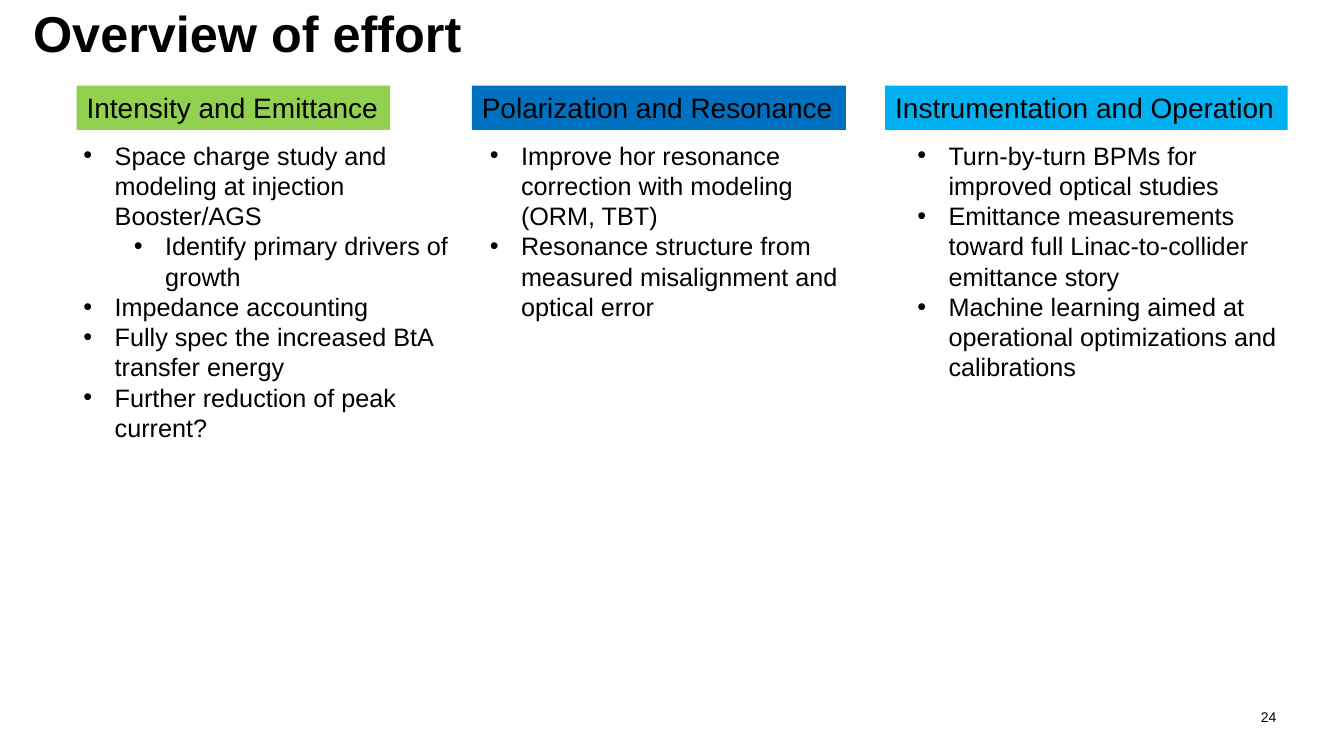
import pptx
import pptx.dml.color
import pptx.enum.shapes
import pptx.enum.text
import pptx.oxml
import pptx.oxml.ns
import pptx.util
from dataclasses import dataclass

Inches = pptx.util.Inches
Pt = pptx.util.Pt
Align = pptx.enum.text.PP_ALIGN
Anchor = pptx.enum.text.MSO_ANCHOR
Fit = pptx.enum.text.MSO_AUTO_SIZE


@dataclass(frozen=True)
class Theme:
    face: str = "Arial"
    ink: str = "000000"
    green: str = "92D050"
    blue: str = "0070C0"
    sky: str = "00B0F0"
    title: int = 36
    head: int = 20
    body: int = 18
    page: int = 10


THEME = Theme()

COLUMNS = [
    ("Intensity and Emittance", THEME.green, (0.76, 3.11), (0.23, 4.63, 3.13), [
        (1, "Space charge study and modeling at injection Booster/AGS"),
        (2, "Identify primary drivers of growth"),
        (1, "Impedance accounting"),
        (1, "Fully spec the increased BtA transfer energy"),
        (1, "Further reduction of peak current?"),
    ]),
    ("Polarization and Resonance", THEME.blue, (4.68, 3.71), (4.26, 4.27, 1.92), [
        (1, "Improve hor resonance correction with modeling (ORM, TBT)"),
        (1, "Resonance structure from measured misalignment and optical error"),
    ]),
    ("Instrumentation and Operation", THEME.sky, (8.78, 3.99), (8.5, 4.27, 2.52), [
        (1, "Turn-by-turn BPMs for improved optical studies"),
        (1, "Emittance measurements toward full Linac-to-collider emittance story"),
        (1, "Machine learning aimed at operational optimizations and calibrations"),
    ]),
]


def apply(target, values):
    for name, value in values.items():
        setattr(target, name, value)


def color(code):
    return pptx.dml.color.RGBColor.from_string(code)


def write(para, text, size, bold=False, **form):
    para.text = text
    apply(para, form)
    apply(para.font, {"name": THEME.face, "size": Pt(size), "bold": bold})
    para.font.color.rgb = color(THEME.ink)


def add_box(slide, area, **form):
    box = slide.shapes.add_textbox(*map(Inches, area))
    apply(box.text_frame, {"word_wrap": True, **form})
    return box.text_frame


def add_head(slide, text, fill, left, width):
    kind = pptx.enum.shapes.MSO_SHAPE.RECTANGLE
    head = slide.shapes.add_shape(kind, *map(Inches, (left, 0.85, width, 0.44)))
    head.shadow.inherit = False
    head.fill.solid()
    head.fill.fore_color.rgb = color(fill)
    head.line.fill.background()
    apply(head.text_frame, {
        "word_wrap": False,
        "auto_size": Fit.SHAPE_TO_FIT_TEXT,
        "vertical_anchor": Anchor.TOP,
    })
    write(head.text_frame.paragraphs[0], text, THEME.head, alignment=Align.LEFT)


def add_bullet(para, level):
    props = para._p.get_or_add_pPr()
    props.set("marL", str(Inches(0.31 + 0.5 * level)))
    props.set("indent", str(Inches(-0.31)))
    space = pptx.oxml.ns.nsdecls("a")
    for tag in ('buFont {} typeface="Arial"', 'buChar {} char="•"'):
        props.append(pptx.oxml.parse_xml(f"<a:{tag.format(space)}/>"))


def add_list(slide, items, left, width, height):
    frame = add_box(slide, (left, 1.34, width, height), auto_size=Fit.SHAPE_TO_FIT_TEXT)
    for row, (level, text) in enumerate(items):
        para = frame.add_paragraph() if row else frame.paragraphs[0]
        add_bullet(para, level)
        write(para, text, THEME.body, level=level)


def add_title(slide, text):
    frame = add_box(slide, (0.23, 0, 12.33, 0.71), vertical_anchor=Anchor.MIDDLE)
    write(frame.paragraphs[0], text, THEME.title, bold=True, line_spacing=0.9)


def add_page(slide, text):
    frame = add_box(
        slide, (12.24, 6.91, 0.47, 0.4), vertical_anchor=Anchor.MIDDLE,
        margin_left=0, margin_top=0, margin_right=Inches(0.05), margin_bottom=0,
    )
    write(frame.paragraphs[0], text, THEME.page, alignment=Align.RIGHT)


def main():
    deck = pptx.Presentation()
    apply(deck, {"slide_width": Inches(13.33), "slide_height": Inches(7.5)})
    slide = deck.slides.add_slide(deck.slide_layouts[6])
    add_page(slide, "24")
    add_title(slide, "Overview of effort")
    for head, fill, span, area, items in COLUMNS:
        add_list(slide, items, *area)
        add_head(slide, head, fill, *span)
    deck.save("out.pptx")


if __name__ == "__main__":
    main()
